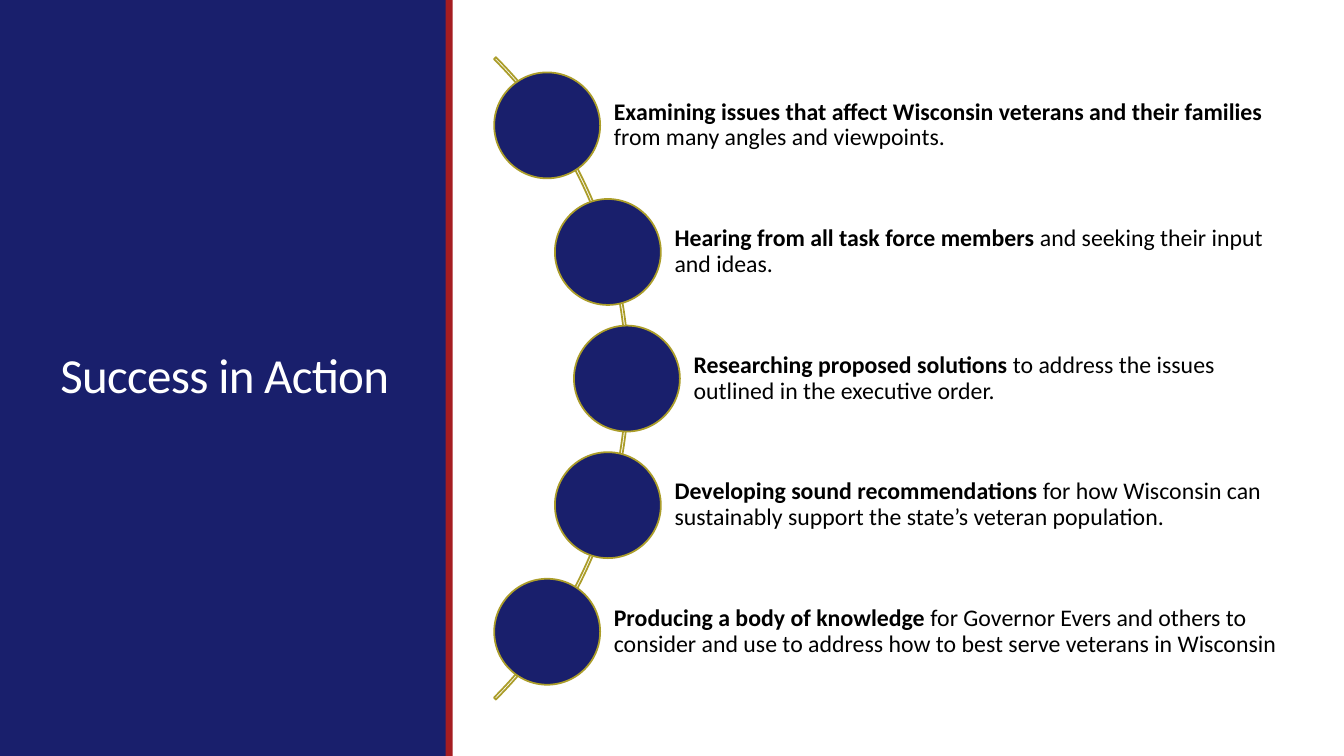
from pptx import Presentation
from pptx.dml.color import RGBColor
from pptx.enum.shapes import MSO_SHAPE
from pptx.enum.text import MSO_ANCHOR
from pptx.util import Cm, Pt

COLORS = {"navy": "191F6C", "red": "A51D21", "gold": "AB9D2A",
          "white": "FFFFFF", "black": "000000"}

ACTIONS = [
    ("Examining issues that affect Wisconsin veterans and their families ",
     "from many angles and viewpoints."),
    ("Hearing from all task force members ",
     "and seeking their input and ideas."),
    ("Researching proposed solutions ",
     "to address the issues outlined in the executive order."),
    ("Developing sound recommendations ",
     "for how Wisconsin can sustainably support the state’s veteran population."),
    ("Producing a body of knowledge ",
     "for Governor Evers and others to consider and use to address "
     "how to best serve veterans in Wisconsin"),
]

prs = Presentation()
prs.slide_width, prs.slide_height = Cm(33.87), Cm(19.05)
s = prs.slides.add_slide(prs.slide_layouts[6])


def add_shape(kind, left, top, width, height, fill=None, line=None):
    """Add a shape placed in cm; without a colour, fill or line is off."""
    sp = s.shapes.add_shape(kind, Cm(left), Cm(top), Cm(width), Cm(height))
    sp.shadow.inherit = False
    if fill:
        sp.fill.solid()
        sp.fill.fore_color.rgb = RGBColor.from_string(COLORS[fill])
    else:
        sp.fill.background()
    if line:
        sp.line.color.rgb = RGBColor.from_string(COLORS[line])
        sp.line.width = Pt(1.25)
    else:
        sp.line.fill.background()
    return sp


def add_text(left, top, width, height, runs, size, color, spacing):
    """Add a one-paragraph text box, centred vertically, from (text, bold) runs."""
    tb = s.shapes.add_textbox(Cm(left), Cm(top), Cm(width), Cm(height))
    tf = tb.text_frame
    tf.word_wrap = True
    tf.vertical_anchor = MSO_ANCHOR.MIDDLE
    p = tf.paragraphs[0]
    p.line_spacing = spacing
    p.font.name = "Calibri"
    p.font.size = Pt(size)
    p.font.color.rgb = RGBColor.from_string(COLORS[color])
    for text, bold in runs:
        r = p.add_run()
        r.text = text
        r.font.name = "Calibri"
        r.font.size = Pt(size)
        r.font.bold = bold
        r.font.color.rgb = RGBColor.from_string(COLORS[color])
    return tf


# Title panel
add_shape(MSO_SHAPE.RECTANGLE, 0, 0, 11.25, 19.05, fill="navy")
add_shape(MSO_SHAPE.RECTANGLE, 11.23, 0, 0.18, 19.05, fill="red")
title = add_text(1.27, 1.04, 8.89, 17.02, [("Success in Action", False)],
                 35, "white", 0.85)
title.paragraphs[0].runs[0].font._element.set("spc", "-50")

# Arc that links the circles
arc = add_shape(MSO_SHAPE.BLOCK_ARC, -7.04, -1.91, 22.89, 22.89, line="gold")
for i, value in enumerate((189, 27, 0.003)):
    arc.adjustments[i] = value

# Circles and their texts, spaced evenly and mirrored about the third
DIAMETER, PITCH, FIRST_Y = 2.67, 3.19, 3.16
TEXT_RIGHT, TEXT_HEIGHT = 32.77, 2.13
CENTER_X = (13.79, 15.32, 15.8, 15.32, 13.79)

for i, (x, (lead, rest)) in enumerate(zip(CENTER_X, ACTIONS)):
    y = FIRST_Y + i * PITCH
    tf = add_text(x, y - TEXT_HEIGHT / 2, TEXT_RIGHT - x, TEXT_HEIGHT,
                  [(lead, True), (rest, False)], 17, "black", 0.9)
    tf.margin_left = Cm(1.68)
    tf.margin_right = tf.margin_top = tf.margin_bottom = Cm(0.12)
    add_shape(MSO_SHAPE.OVAL, x - DIAMETER / 2, y - DIAMETER / 2,
              DIAMETER, DIAMETER, fill="navy", line="gold")

prs.save("out.pptx")
